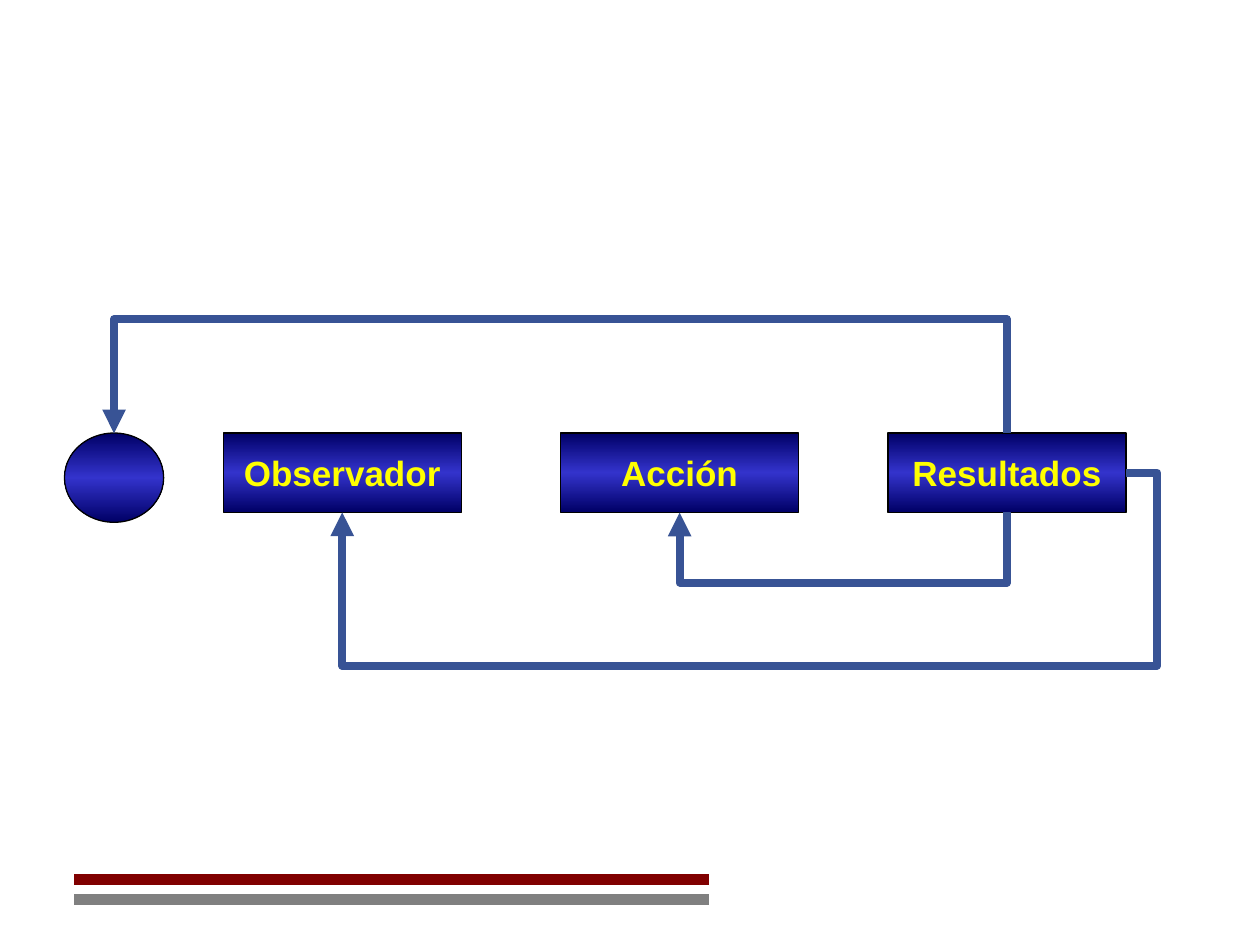
"""Build a slide with a feedback loop from results to action, observer and origin."""
import copy

import lxml.etree
import pptx
import pptx.dml.color
import pptx.enum.shapes
import pptx.enum.text
import pptx.oxml.ns
import pptx.util

Cm = pptx.util.Cm
Pt = pptx.util.Pt
RGBColor = pptx.dml.color.RGBColor
SHAPE = pptx.enum.shapes.MSO_SHAPE
CONNECTOR = pptx.enum.shapes.MSO_CONNECTOR
qn = pptx.oxml.ns.qn

NAVY = RGBColor(0x00, 0x00, 0x66)
BLUE = RGBColor(0x33, 0x33, 0xCC)
YELLOW = RGBColor(0xFF, 0xFF, 0x00)
BLACK = RGBColor(0x00, 0x00, 0x00)
STEEL = RGBColor(0x38, 0x53, 0x95)
MAROON = RGBColor(0x80, 0x00, 0x00)
GRAY = RGBColor(0x80, 0x80, 0x80)

TOP_SITE, BOTTOM_SITE, RIGHT_SITE = 0, 2, 3
NODE_TOP = 8.73
BOX_SIZE = (4.8, 1.6)
CIRCLE_SIZE = (2.0, 1.8)
NODES = [
    ("Observador", SHAPE.RECTANGLE, 4.5, BOX_SIZE),
    ("Resultados", SHAPE.RECTANGLE, 17.9, BOX_SIZE),
    ("Acción", SHAPE.RECTANGLE, 11.3, BOX_SIZE),
    ("", SHAPE.OVAL, 1.3, CIRCLE_SIZE),
]
RULES = [(17.73, MAROON), (18.13, GRAY)]
RULE_SPAN = (1.5, 14.3)
ACTION_DROP = 1.42
ORIGIN_RISE = 2.29
OBSERVER_SIDE = 0.63
OBSERVER_DROP = 3.89
THIN = 0.01


def style_line(connector, color, width):
    """Colour a connector and remove its shadow."""
    connector.line.color.rgb = color
    connector.line.width = Pt(width)
    lxml.etree.SubElement(connector._element.spPr, qn("a:effectLst"))


def add_rule(slide, y, color):
    """Draw one footer rule."""
    left, right = RULE_SPAN
    rule = slide.shapes.add_connector(CONNECTOR.STRAIGHT, Cm(left), Cm(y), Cm(right), Cm(y))
    style_line(rule, color, 6)


def add_node(slide, label, kind, left, size):
    """Draw a gradient node with its label."""
    width, height = size
    node = slide.shapes.add_shape(kind, Cm(left), Cm(NODE_TOP), Cm(width), Cm(height))
    node.shadow.inherit = False
    node.line.color.rgb = BLACK
    node.line.width = Pt(0.75)
    node.fill.gradient()
    node.fill.gradient_angle = 270
    edge, middle = node.fill.gradient_stops
    edge.position, edge.color.rgb = 0, NAVY
    middle.position, middle.color.rgb = 0.5, BLUE
    stops = node._element.spPr.find(".//" + qn("a:gsLst"))
    last = copy.deepcopy(stops[0])
    last.set("pos", "100000")
    stops.append(last)
    if label:
        frame = node.text_frame
        frame.word_wrap = False
        frame.vertical_anchor = pptx.enum.text.MSO_ANCHOR.MIDDLE
        para = frame.paragraphs[0]
        para.alignment = pptx.enum.text.PP_ALIGN.CENTER
        span = para.add_run()
        span.text = label
        span.font.name = "Arial"
        span.font.size = Pt(20)
        span.font.bold = True
        span.font.color.rgb = YELLOW
    return node


def add_arrow(slide, begin, end, preset, place, turn, flips, bends):
    """Draw a bent arrow between two (node, site) ends."""
    arrow = slide.shapes.add_connector(CONNECTOR.ELBOW, 0, 0, 0, 0)
    arrow.begin_connect(*begin)
    arrow.end_connect(*end)
    arrow.left, arrow.top, arrow.width, arrow.height = (Cm(value) for value in place)
    properties = arrow._element.spPr
    frame = properties.find(qn("a:xfrm"))
    frame.set("rot", str(turn * 60000))
    for name, letter in (("flipH", "h"), ("flipV", "v")):
        frame.set(name, str(int(letter in flips)))
    geometry = properties.find(qn("a:prstGeom"))
    geometry.set("prst", preset)
    guides = geometry.find(qn("a:avLst"))
    for number, bend in enumerate(bends, 1):
        guide = lxml.etree.SubElement(guides, qn("a:gd"))
        guide.set("name", f"adj{number}")
        guide.set("fmla", f"val {round(bend * 100000)}")
    style_line(arrow, STEEL, 4.5)
    line = properties.find(qn("a:ln"))
    lxml.etree.SubElement(line, qn("a:tailEnd")).set("type", "triangle")


def add_u_arrow(slide, begin, end, edge, turn, flips, reach):
    """Draw a U-shaped arrow between two nodes at the same height."""
    centers = [(node.left + node.width / 2) / Cm(1) for node, site in (begin, end)]
    span = abs(centers[0] - centers[1])
    middle = sum(centers) / 2
    place = (middle - THIN / 2, edge - span / 2, THIN, span)
    add_arrow(slide, begin, end, "bentConnector3", place, turn, flips, [reach / THIN])


def main():
    """Build and save the slide."""
    deck = pptx.Presentation()
    deck.slide_width, deck.slide_height = Cm(25.4), Cm(19.05)
    slide = deck.slides.add_slide(deck.slide_layouts[6])
    for rule in RULES:
        add_rule(slide, *rule)
    observer, results, action, origin = [add_node(slide, *node) for node in NODES]

    width, height = BOX_SIZE
    add_u_arrow(slide, (results, BOTTOM_SITE), (action, BOTTOM_SITE),
                NODE_TOP + height, 90, "", ACTION_DROP)
    left = (observer.left + observer.width / 2) / Cm(1)
    right = (results.left + results.width) / Cm(1)
    place = (left, NODE_TOP + height / 2, right - left, height / 2)
    bends = [-OBSERVER_SIDE / place[2], OBSERVER_DROP / place[3]]
    add_arrow(slide, (results, RIGHT_SITE), (observer, BOTTOM_SITE),
              "bentConnector4", place, 0, "h", bends)
    add_u_arrow(slide, (results, TOP_SITE), (origin, TOP_SITE),
                NODE_TOP, 270, "hv", -ORIGIN_RISE)
    deck.save("out.pptx")


if __name__ == "__main__":
    main()
